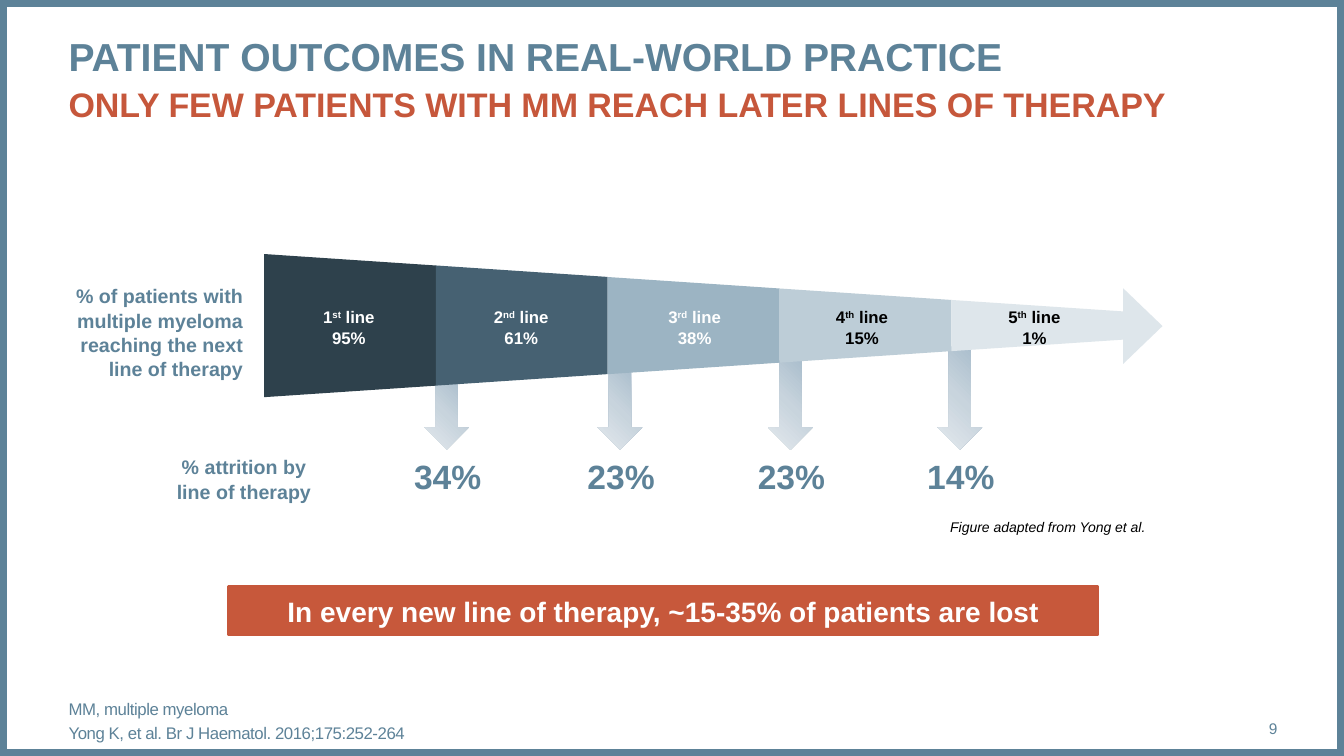
from copy import deepcopy

from lxml.etree import SubElement
from pptx import Presentation
from pptx.dml.color import RGBColor
from pptx.enum.shapes import MSO_SHAPE as Shape
from pptx.enum.text import MSO_ANCHOR as Anchor, MSO_AUTO_SIZE as AutoSize, PP_ALIGN as Align
from pptx.oxml.ns import qn
from pptx.util import Inches, Pt

BLUE, ORANGE, BANNER = "5D8298", "C6573B", "C7583B"
WHITE, BLACK, PALE = "FFFFFF", "000000", "DEE6EB"
ARROW_COLORS = ["A5BACA", "C8D4DD", "E4E9EE"]

# Funnel geometry in inches
FUNNEL_LEFT, FUNNEL_WIDTH = 2.62, 8.52
FUNNEL_TOP, FUNNEL_BOTTOM, FUNNEL_TAPER = 2.52, 3.94, 0.57
ARROW_TIP = 4.46

# Number, ordinal ending, share reaching the line, fill, text colour, label centre
THERAPY_LINES = [
    ("1", "st", "95%", "2E414C", WHITE, 3.46),
    ("2", "nd", "61%", "466172", WHITE, 5.17),
    ("3", "rd", "38%", "9CB4C3", WHITE, 6.89),
    ("4", "th", "15%", "BDCDD7", BLACK, 8.55),
    ("5", "th", "1%", PALE, BLACK, 10.26),
]
# Share lost, arrow centre, arrow top
ATTRITION = [
    ("34%", 4.43, 3.77),
    ("23%", 6.15, 3.67),
    ("23%", 7.84, 3.58),
    ("14%", 9.52, 3.44),
]


def rgb(color):
    return RGBColor.from_string(color)


def set_format(target, values):
    for name, value in values.items():
        setattr(target, name, value)


def add_run(paragraph, text, size, color, xml=None, **style):
    run = paragraph.add_run()
    run.text = text
    set_format(run.font, {"name": "Arial", "size": Pt(size), "bold": False, **style})
    run.font.color.rgb = rgb(color)
    for name, value in (xml or {}).items():
        run.font._element.set(name, value)


def set_frame(frame, margins=(0, 0), anchor=Anchor.TOP, wrap=True):
    side, edge = (Inches(margin) for margin in margins)
    set_format(frame, {
        "margin_left": side, "margin_right": side,
        "margin_top": edge, "margin_bottom": edge,
        "vertical_anchor": anchor, "word_wrap": wrap, "auto_size": AutoSize.NONE,
    })


def place(shape, left, top, width, height):
    set_format(shape, {"left": Inches(left), "top": Inches(top),
                       "width": Inches(width), "height": Inches(height)})


def add_text(slide, box, text, size, color, align=Align.CENTER, spacing=1.0,
             margins=(0.1, 0.05), anchor=Anchor.TOP, wrap=True, **style):
    frame = slide.shapes.add_textbox(*map(Inches, box)).text_frame
    set_frame(frame, margins, anchor, wrap)
    paragraph = frame.paragraphs[0]
    set_format(paragraph, {"alignment": align, "line_spacing": spacing})
    add_run(paragraph, text, size, color, **style)


def paint(shape, fill=None, line=None, line_width=1):
    shape.shadow.inherit = False
    if fill:
        shape.fill.solid()
        shape.fill.fore_color.rgb = rgb(fill)
    else:
        shape.fill.background()
    if line:
        shape.line.color.rgb = rgb(line)
        shape.line.width = Pt(line_width)
    else:
        shape.line.fill.background()


def add_preset(slide, preset, box, **colors):
    shape = slide.shapes.add_shape(preset, *map(Inches, box))
    paint(shape, **colors)
    return shape


def add_title(slide):
    title = slide.shapes.title
    place(title, 0.68, 0.28, 11.99, 0.94)
    set_frame(title.text_frame)
    heading = title.text_frame.paragraphs[0]
    set_format(heading, {"alignment": Align.LEFT, "line_spacing": 1.1})
    add_run(heading, "PATIENT OUTCOMES IN REAL-WORLD PRACTICE", 27.9, BLUE, bold=True)
    heading.add_line_break()
    add_run(heading, "ONLY FEW PATIENTS WITH MM REACH LATER LINES OF THERAPY",
            24.3, ORANGE, bold=True)


def add_footnotes(slide):
    footnotes = slide.placeholders[1]
    place(footnotes, 0.68, 6.95, 11.13, 0.4)
    frame = footnotes.text_frame
    set_frame(frame, anchor=Anchor.MIDDLE)
    notes = ["MM, multiple myeloma", "Yong K, et al. Br J Haematol. 2016;175:252-264"]
    for index, note in enumerate(notes):
        paragraph = frame.add_paragraph() if index else frame.paragraphs[0]
        set_format(paragraph, {"alignment": Align.LEFT, "space_before": Pt(3 if index else 0)})
        properties = paragraph._p.get_or_add_pPr()
        properties.set("marL", "0")
        properties.set("indent", "0")
        SubElement(properties, qn("a:buNone"))
        add_run(paragraph, note, 12, BLUE, xml={"spc": "-30"})


def add_attrition_arrow(slide, center, top):
    arrow = add_preset(slide, Shape.DOWN_ARROW, (center - 0.22, top, 0.44, ARROW_TIP - top))
    arrow.fill.gradient()
    arrow.fill.gradient_angle = 225
    # The default gradient has two stops; a middle one is added
    first_stop = next(arrow._element.iter(qn("a:gs")))
    first_stop.addnext(deepcopy(first_stop))
    for index, (stop, color) in enumerate(zip(arrow.fill.gradient_stops, ARROW_COLORS)):
        stop.position = index / 2
        stop.color.rgb = rgb(color)


def add_funnel_segment(slide, index, fill):
    count = len(THERAPY_LINES)
    (left, inset), (right, next_inset) = (
        (FUNNEL_LEFT + FUNNEL_WIDTH * step / count, FUNNEL_TAPER * step / count)
        for step in (index, index + 1))
    corners = [
        (left, FUNNEL_TOP + inset),
        (left, FUNNEL_BOTTOM - inset),
        (right, FUNNEL_BOTTOM - next_inset),
        (right, FUNNEL_TOP + next_inset),
    ]
    start, *others = [(Inches(x), Inches(y)) for x, y in corners]
    outline = slide.shapes.build_freeform(*start)
    outline.add_line_segments(others, close=True)
    paint(outline.convert_to_shape(), fill=fill)


def add_line_label(slide, number, ending, share, color, center):
    box = (center - 0.32, 2.99, 0.64, 0.5)
    frame = slide.shapes.add_textbox(*map(Inches, box)).text_frame
    set_frame(frame, (0.05, 0.05), wrap=False)
    name, reached = frame.paragraphs[0], frame.add_paragraph()
    for paragraph in (name, reached):
        set_format(paragraph, {"alignment": Align.CENTER, "line_spacing": 1.04})
    add_run(name, number, 12, color, bold=True)
    add_run(name, ending, 12, color, xml={"baseline": "30000"}, bold=True)
    add_run(name, " line", 12, color, bold=True)
    add_run(reached, share, 12, color, bold=True)


def add_banner(slide):
    banner = add_preset(slide, Shape.RECTANGLE, (2.27, 5.82, 8.62, 0.48),
                        fill=BANNER, line=ORANGE, line_width=2)
    set_frame(banner.text_frame, (0.04, 0.04), Anchor.MIDDLE)
    message = banner.text_frame.paragraphs[0]
    message.alignment = Align.CENTER
    add_run(message, "In every new line of therapy, ~15-35% of patients are lost",
            20, WHITE, bold=True)


def main():
    deck = Presentation()
    set_format(deck, {"slide_width": Inches(13.33), "slide_height": Inches(7.5)})
    slide = deck.slides.add_slide(deck.slide_layouts[1])

    # Frame, title and footer
    add_preset(slide, Shape.RECTANGLE, (0, 0, 13.33, 7.5), line=BLUE, line_width=10)
    add_title(slide)
    add_text(slide, (11.81, 7.03, 0.86, 0.4), "9", 11, BLUE, Align.RIGHT,
             margins=(0, 0), anchor=Anchor.MIDDLE)
    add_footnotes(slide)
    add_text(slide, (9.3, 5.11, 2.13, 0.24), "Figure adapted from Yong et al.", 10, BLACK,
             Align.RIGHT, margins=(0.07, 0.03), wrap=False, italic=True)

    # Attrition, behind the funnel
    for share, center, top in ATTRITION:
        add_text(slide, (center - 0.38, 4.42, 0.78, 0.61), share, 24, BLUE,
                 margins=(0.05, 0.1), wrap=False, bold=True)
        add_attrition_arrow(slide, center, top)

    # Funnel with its arrow tip
    for index, (number, ending, share, fill, color, center) in enumerate(THERAPY_LINES):
        add_funnel_segment(slide, index, fill)
        add_line_label(slide, number, ending, share, color, center)
    funnel_tip = add_preset(slide, Shape.ISOSCELES_TRIANGLE, (10.96, 3.04, 0.75, 0.39), fill=PALE)
    funnel_tip.rotation = 90

    # Row captions and conclusion
    add_text(slide, (0.37, 2.76, 2.14, 1.04),
             "% of patients with multiple myeloma reaching the next line of therapy",
             14, BLUE, Align.RIGHT, spacing=1.04, bold=True)
    add_text(slide, (1.57, 4.46, 1.7, 0.57), "% attrition by line of therapy",
             14, BLUE, spacing=1.04, bold=True)
    add_banner(slide)

    deck.save("out.pptx")


if __name__ == "__main__":
    main()
